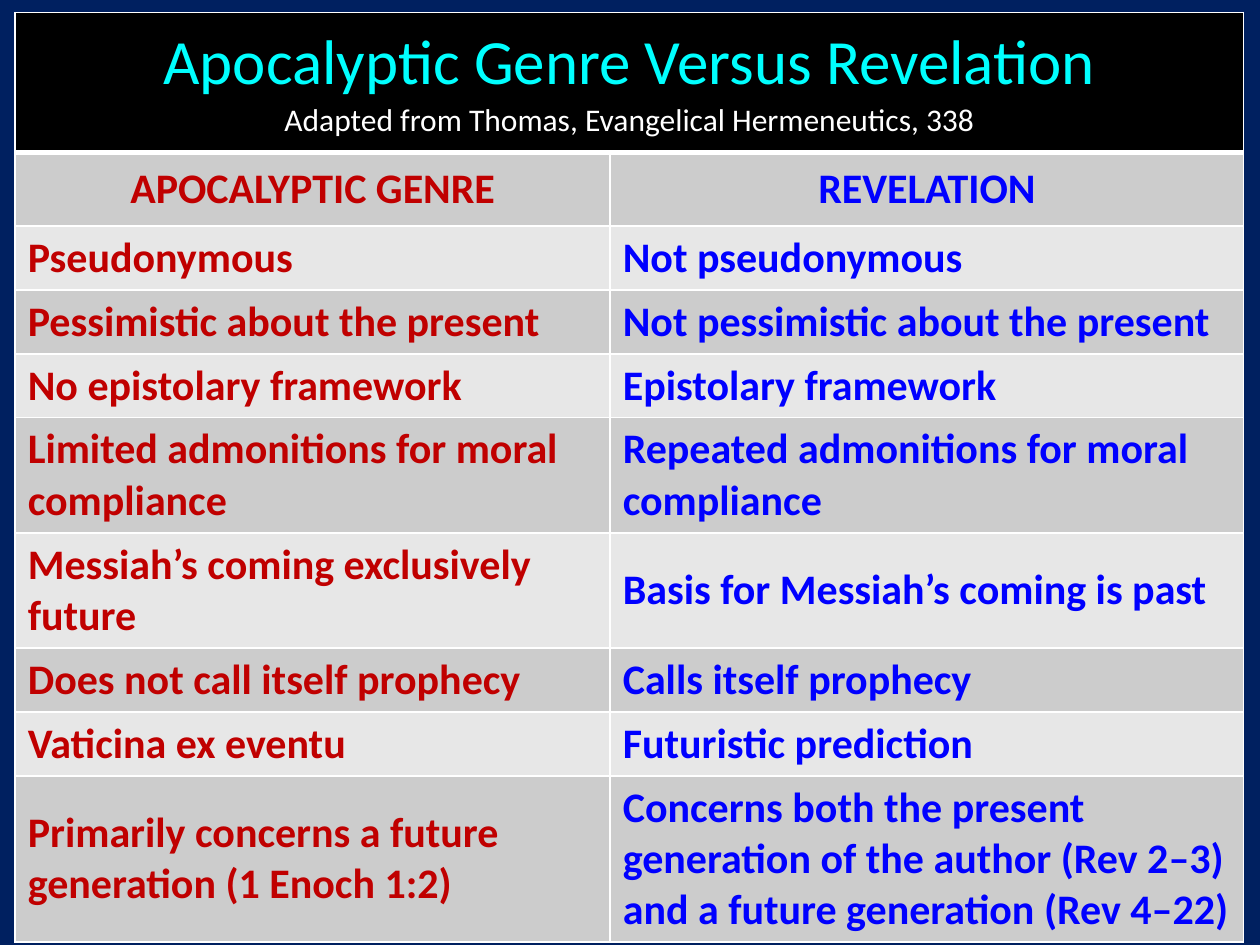
from lxml.etree import SubElement
from pptx import Presentation
from pptx.dml.color import RGBColor
from pptx.enum.text import MSO_ANCHOR as Anchor, PP_ALIGN as Align
from pptx.oxml.ns import qn
from pptx.util import Pt

COLORS = {
    "background": "002060",
    "banner": "000000",
    "title": "00FFFF",
    "white": "FFFFFF",
    "genre": "C00000",
    "revelation": "0000FF",
    "dark_band": "CCCCCC",
    "light_band": "E7E7E7",
}
FONT = "Calibri"
COLUMN_WIDTHS = (340, 362)
ROW_HEIGHTS = (80, 42, 28, 26.5) + (25,) * 6
COMPARISON = [
    ("APOCALYPTIC GENRE", "REVELATION"),
    ("Pseudonymous", "Not pseudonymous"),
    ("Pessimistic about the present", "Not pessimistic about the present"),
    ("No epistolary framework", "Epistolary framework"),
    ("Limited admonitions for moral compliance", "Repeated admonitions for moral compliance"),
    ("Messiah’s coming exclusively future", "Basis for Messiah’s coming is past"),
    ("Does not call itself prophecy", "Calls itself prophecy"),
    ("Vaticina ex eventu", "Futuristic prediction"),
    (
        "Primarily concerns a future generation (1 Enoch 1:2)",
        "Concerns both the present generation of the author (Rev 2–3) "
        "and a future generation (Rev 4–22)",
    ),
]


def rgb(name):
    """Return the named colour."""
    return RGBColor.from_string(COLORS[name])


def write(paragraph, text, size, color, bold, align):
    """Add one formatted run to a paragraph."""
    paragraph.alignment = align
    run = paragraph.add_run()
    run.text = text
    run.font.name = FONT
    run.font.size = Pt(size)
    run.font.bold = bold
    run.font.color.rgb = rgb(color)


def style_cell(cell, fill, bottom=1):
    """Give a cell white borders, a solid fill and middle anchoring."""
    cell.vertical_anchor = Anchor.MIDDLE
    properties = cell._tc.get_or_add_tcPr()
    for side, width in (("L", 1), ("R", 1), ("T", 1), ("B", bottom)):
        line = SubElement(properties, qn(f"a:ln{side}"), w=str(Pt(width)))
        solid = SubElement(line, qn("a:solidFill"))
        SubElement(solid, qn("a:srgbClr"), val=COLORS["white"])
    cell.fill.solid()
    cell.fill.fore_color.rgb = rgb(fill)


def fill_banner(table):
    """Merge the first row and write the title and its source."""
    banner = table.cell(0, 0)
    banner.merge(table.cell(0, 1))
    for cell in table.rows[0].cells:
        style_cell(cell, "banner", bottom=3)
    frame = banner.text_frame
    write(frame.paragraphs[0], "Apocalyptic Genre Versus Revelation", 36, "title", False, Align.CENTER)
    write(frame.add_paragraph(), "Adapted from Thomas, Evangelical Hermeneutics, 338",
          18, "white", False, Align.CENTER)


def add_comparison(slide, left, top, width, height):
    """Place the comparison table in the given box."""
    shape = slide.shapes.add_table(
        len(ROW_HEIGHTS), len(COLUMN_WIDTHS), Pt(left), Pt(top), Pt(width), Pt(height)
    )
    table = shape.table
    for column, share in zip(table.columns, COLUMN_WIDTHS):
        column.width = Pt(width * share / sum(COLUMN_WIDTHS))
    for row, row_height in zip(table.rows, ROW_HEIGHTS):
        row.height = Pt(row_height)
    shape.height = Pt(height)
    fill_banner(table)
    for index, texts in enumerate(COMPARISON, start=1):
        band = "dark_band" if index % 2 else "light_band"
        align = Align.CENTER if index == 1 else Align.LEFT
        for column, (text, color) in enumerate(zip(texts, ("genre", "revelation"))):
            cell = table.cell(index, column)
            style_cell(cell, band)
            write(cell.text_frame.paragraphs[0], text, 24, color, True, align)


def main():
    """Build the slide and save the presentation."""
    presentation = Presentation()
    presentation.slide_width, presentation.slide_height = Pt(720), Pt(540)
    slide = presentation.slides.add_slide(presentation.slide_layouts[6])
    slide.background.fill.solid()
    slide.background.fill.fore_color.rgb = rgb("background")
    add_comparison(slide, 8.7, 7.2, 702, 525.6)
    presentation.save("out.pptx")


if __name__ == "__main__":
    main()
